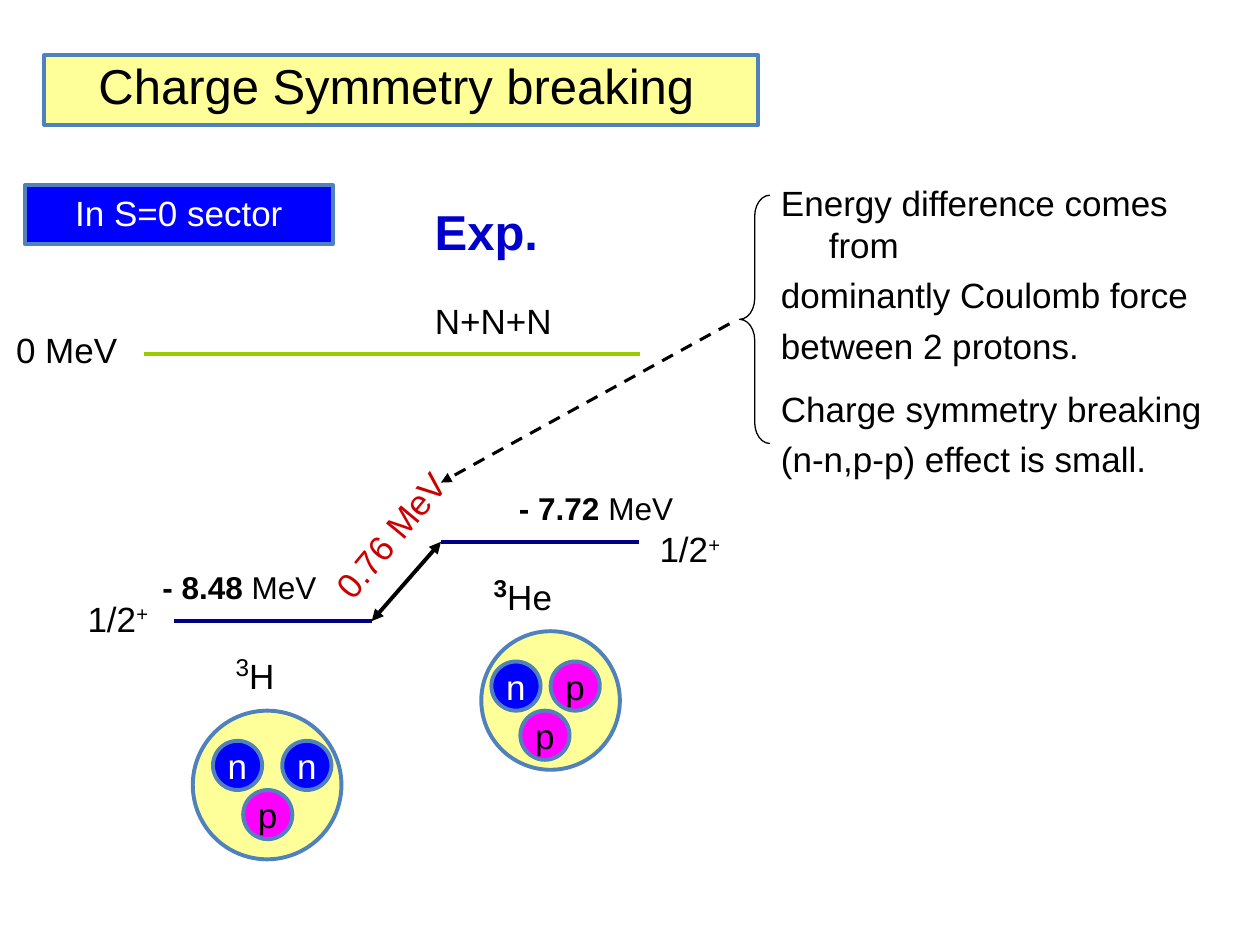
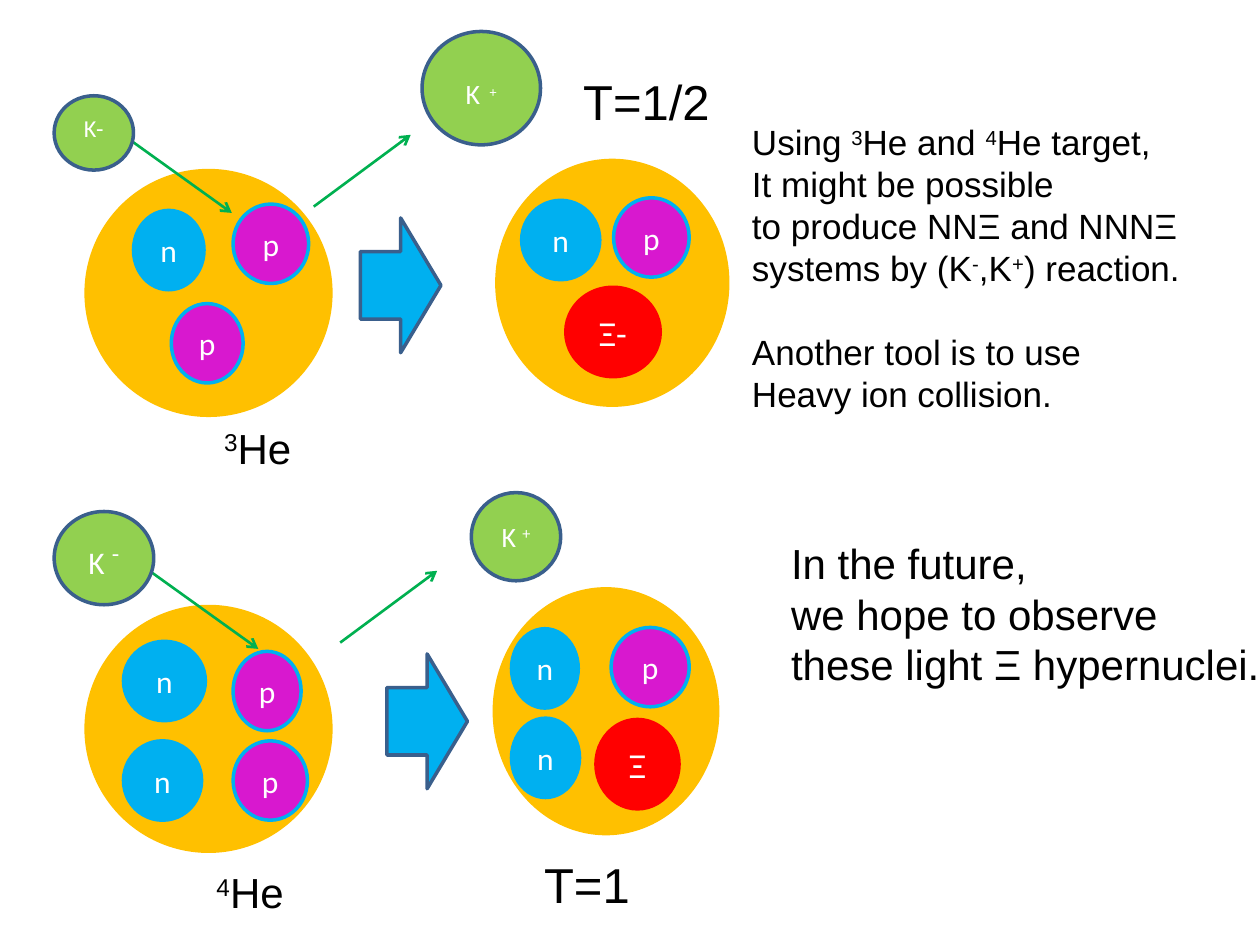
from lxml import etree
from pptx import Presentation
from pptx.dml.color import RGBColor
from pptx.enum.dml import MSO_LINE
from pptx.enum.shapes import MSO_CONNECTOR, MSO_SHAPE
from pptx.enum.text import MSO_ANCHOR, MSO_AUTO_SIZE, PP_ALIGN
from pptx.oxml.ns import qn
from pptx.util import Pt

EMU_PER_PX = 9144
BLANK_LAYOUT = 6
RECTANGLE, ELLIPSE = MSO_SHAPE.RECTANGLE, MSO_SHAPE.OVAL
RIGHT_ARROW, LEFT_BRACE = MSO_SHAPE.RIGHT_ARROW, MSO_SHAPE.LEFT_BRACE
STRAIGHT = MSO_CONNECTOR.STRAIGHT
DASH = MSO_LINE.DASH
MIDDLE = MSO_ANCHOR.MIDDLE
GROW = MSO_AUTO_SIZE.SHAPE_TO_FIT_TEXT
LEFT, CENTER = PP_ALIGN.LEFT, PP_ALIGN.CENTER

BLACK = RGBColor(0x00, 0x00, 0x00)
WHITE = RGBColor(0xFF, 0xFF, 0xFF)
BLUE = RGBColor(0x00, 0x00, 0xFF)
EXP_BLUE = RGBColor(0x00, 0x00, 0xCC)
NAVY = RGBColor(0x00, 0x00, 0x80)
STEEL = RGBColor(0x4F, 0x81, 0xBD)
DARK_STEEL = RGBColor(0x3A, 0x5F, 0x8C)
SKY = RGBColor(0x00, 0xB0, 0xF0)
PALE_YELLOW = RGBColor(0xFF, 0xFF, 0x99)
ORANGE = RGBColor(0xFF, 0xC0, 0x00)
MAGENTA = RGBColor(0xFF, 0x00, 0xFF)
PURPLE = RGBColor(0xD8, 0x18, 0xCF)
RED = RGBColor(0xFF, 0x00, 0x00)
DARK_RED = RGBColor(0xCC, 0x00, 0x00)
LIME = RGBColor(0x99, 0xCC, 0x00)
KAON_GREEN = RGBColor(0x92, 0xD0, 0x50)
ARROW_GREEN = RGBColor(0x00, 0xB0, 0x50)

BOLD, SUPER = "bold", "super"

LEVEL_STYLE = {
    "font": "Arial", "size": 20, "width": 2.25, "shell": (PALE_YELLOW, STEEL),
    "n": (BLUE, STEEL, WHITE), "p": (MAGENTA, STEEL, BLACK),
}
REACTION_STYLE = {
    "font": "Calibri", "size": 18, "width": 2, "shell": (ORANGE, None),
    "n": (SKY, SKY, WHITE), "p": (PURPLE, SKY, WHITE),
    "Ξ": (RED, RED, WHITE), "Ξ-": (RED, RED, WHITE),
}


def px(value):
    return value * EMU_PER_PX


def offset(box, left, top):
    return (box[0] + left, box[1] + top, *box[2:])


def add_runs(paragraph, runs, color, font):
    for text, size, *flags in runs:
        run = paragraph.add_run()
        run.text = text
        run.font.name = font
        run.font.size = Pt(size)
        run.font.color.rgb = color
        run.font.bold = BOLD in flags
        if SUPER in flags:
            run.font._element.set("baseline", "30000")


def add_text(slide, box, lines, color=BLACK, align=LEFT):
    textbox = slide.shapes.add_textbox(*map(px, box))
    frame = textbox.text_frame
    frame.word_wrap = False
    frame.auto_size = GROW
    for index, runs in enumerate(lines):
        paragraph = frame.add_paragraph() if index else frame.paragraphs[0]
        paragraph.alignment = align
        add_runs(paragraph, runs, color, "Arial")
    return textbox


def add_label(slide, box, *runs, color=BLACK):
    return add_text(slide, box, [runs], color, CENTER)


def add_figure(slide, kind, box, fill, line, width=2.0):
    shape = slide.shapes.add_shape(kind, *map(px, box))
    shape.shadow.inherit = False
    if fill is None:
        shape.fill.background()
    else:
        shape.fill.solid()
        shape.fill.fore_color.rgb = fill
    if line is None:
        shape.line.fill.background()
    else:
        shape.line.color.rgb = line
        shape.line.width = Pt(width)
    return shape


def add_disc(slide, box, colors, runs, style):
    fill, line, text_color = colors
    disc = add_figure(slide, ELLIPSE, box, fill, line, style["width"])
    frame = disc.text_frame
    frame.word_wrap = False
    frame.vertical_anchor = MIDDLE
    paragraph = frame.paragraphs[0]
    paragraph.alignment = CENTER
    add_runs(paragraph, runs, text_color, style["font"])


def add_line(slide, start, end, color, width, head=None, tail=None, dash=None):
    connector = slide.shapes.add_connector(STRAIGHT, *map(px, (*start, *end)))
    connector.line.color.rgb = color
    connector.line.width = Pt(width)
    if dash:
        connector.line.dash_style = dash
    outline = connector.line._get_or_add_ln()
    for tag, arrowhead in (("a:headEnd", head), ("a:tailEnd", tail)):
        if arrowhead:
            etree.SubElement(outline, qn(tag), type=arrowhead)
    etree.SubElement(connector._element.spPr, qn("a:effectLst"))


def add_nucleus(slide, box, nucleons, style):
    add_figure(slide, ELLIPSE, box, *style["shell"], style["width"])
    for name, *nucleon_box in nucleons:
        size = 20 if "Ξ" in name else style["size"]
        add_disc(slide, offset(nucleon_box, *box[:2]), style[name],
                 [(name, size)], style)


def add_headings(slide, left, top):
    add_figure(slide, RECTANGLE, (left + 15, top, 567, 55), PALE_YELLOW, STEEL, 2.25)
    add_label(slide, (left + 33, top - 5, 523, 57), ("Charge Symmetry breaking", 28))
    add_figure(slide, RECTANGLE, (left, top + 103, 244, 47), BLUE, STEEL, 2.25)
    add_label(slide, (left, top + 103, 244, 43), ("In S=0 sector", 20), color=WHITE)
    add_label(slide, (left + 315, top + 111, 102, 57), ("Exp.", 28, BOLD), color=EXP_BLUE)


def add_levels(slide, left, top):
    def at(x, y):
        return left + x, top + y

    add_line(slide, at(113, 48), at(507, 48), LIME, 2.25)
    add_label(slide, (*at(334, 0), 113, 43), ("N+N+N", 20))
    add_label(slide, (*at(-1, 23), 106, 43), ("0 MeV", 20))
    levels = [
        (137, 260, "- 8.48", (118, 213), (58, 236)),
        (349, 197, "- 7.72", (401, 150), (512, 181)),
    ]
    for x, y, energy, energy_at, spin_at in levels:
        add_line(slide, at(x, y), at(x + 157, y), NAVY, 2.25)
        add_label(slide, (*at(*energy_at), 142, 40), (energy, 18, BOLD), (" MeV", 18))
        add_label(slide, (*at(*spin_at), 69, 43), ("1/2", 20), ("+", 20, SUPER))
    add_line(slide, at(349, 197), at(294, 260), BLACK, 2.25, "triangle", "triangle")
    gap = add_label(slide, (*at(239, 170), 139, 43), ("0.76 MeV", 20), color=DARK_RED)
    gap.rotation = 309.5

    add_label(slide, (*at(175, 276), 53, 43), ("3", 24, SUPER), ("H", 20))
    add_nucleus(slide, (*at(152, 331), 118, 118), [
        ("n", 16, 24, 39, 39), ("n", 71, 24, 39, 39), ("p", 40, 63, 39, 39),
    ], LEVEL_STYLE)
    add_label(slide, (*at(380, 213), 68, 43), ("3", 24, SUPER, BOLD), ("He", 20))
    add_nucleus(slide, (*at(381, 268), 110, 110), [
        ("n", 8, 24, 39, 39), ("p", 31, 63, 39, 39), ("p", 55, 24, 39, 39),
    ], LEVEL_STYLE)


def add_explanation(slide, left, top):
    add_line(slide, (left - 8, top + 102), (left - 237, top + 228), BLACK, 1.75,
             tail="triangle", dash=DASH)
    brace = add_figure(slide, LEFT_BRACE, (left, top, 24, 197), None, BLACK, 0.75)
    brace.adjustments[0] = 0.69
    lines = [
        ("Energy difference comes from", 1.0),
        ("dominantly Coulomb force", 1.2),
        ("between 2 protons.", 1.2),
        ("Charge symmetry breaking", 1.5),
        ("(n-n,p-p) effect is small.", 1.2),
    ]
    textbox = add_text(slide, (left + 23, top - 16, 370, 213),
                       [[(text, 20)] for text, spacing in lines])
    textbox.text_frame.word_wrap = True
    for paragraph, (text, spacing) in zip(textbox.text_frame.paragraphs, lines):
        paragraph.line_spacing = spacing
        properties = paragraph._p.get_or_add_pPr()
        properties.set("marL", str(px(38)))
        properties.set("indent", str(-px(38)))


def add_reaction(slide, left, top, shift, reaction):
    def at(x, y):
        return left + x, top + y

    add_nucleus(slide, offset(reaction["product_box"], left, top),
                reaction["product"], REACTION_STYLE)
    add_nucleus(slide, (left, top, 197, 197), reaction["target"], REACTION_STYLE)
    add_line(slide, at(shift + 18, -36), at(shift + 117, 35), ARROW_GREEN, 1.5, tail="arrow")
    add_line(slide, at(shift + 182, 30), at(shift + 259, -27), ARROW_GREEN, 1.5, tail="arrow")
    add_figure(slide, RIGHT_ARROW, (*at(shift + 219, 39), 64, 107), SKY, DARK_STEEL)
    for kaon_box, runs in reaction["kaons"]:
        add_disc(slide, offset(kaon_box, left, top), (KAON_GREEN, DARK_STEEL, WHITE),
                 runs, REACTION_STYLE)
    add_text(slide, (*at(*reaction["target_at"]), 76, 51),
             [[(reaction["mass"], 24, SUPER), ("He", 24)]])
    add_text(slide, offset(reaction["isospin_box"], left, top), [[(reaction["isospin"], 28)]])


def add_outlook(slide, left, top):
    textbox = add_text(slide, (left, top, 364, 246), [
        [("Using ", 20), ("3", 20, SUPER), ("He and ", 20), ("4", 20, SUPER),
         ("He target,", 20)],
        [("It might be possible", 20)],
        [("to produce NNΞ and NNNΞ", 20)],
        [("systems by (K", 20), ("-", 20, SUPER), (",K", 20), ("+", 20, SUPER),
         (") reaction.", 20)],
        [("Another tool is to use", 20)],
        [("Heavy ion collision.", 20)],
    ])
    textbox.text_frame.paragraphs[4].space_before = Pt(24)
    future = ["In the future,", "we hope to observe", "these light Ξ hypernuclei."]
    add_text(slide, (left + 31, top + 331, 396, 131), [[(line, 24)] for line in future])


HELIUM_3 = {
    "mass": "3", "target_at": (101, 196),
    "target": [("n", 39, 33, 56, 63), ("p", 118, 28, 60, 63), ("p", 69, 107, 57, 63)],
    "product_box": (326, -8, 186, 197),
    "product": [("n", 21, 33, 62, 63), ("Ξ-", 56, 102, 75, 71), ("p", 94, 31, 60, 63)],
    "kaons": [
        ((-24, -58, 63, 59), [("K-", 24, SUPER)]),
        ((268, -109, 94, 90), [("K", 16), (" ", 24), ("+", 14, SUPER)]),
    ],
    "isospin": "T=1/2", "isospin_box": (386, -82, 122, 57),
}
HELIUM_4 = {
    "mass": "4", "target_at": (95, 203),
    "target": [("n", 31, 29, 65, 63), ("n", 31, 108, 62, 63),
               ("p", 118, 37, 54, 63), ("p", 118, 108, 59, 63)],
    "product_box": (324, -14, 180, 197),
    "product": [("n", 15, 33, 53, 63), ("n", 15, 104, 54, 63),
                ("Ξ", 82, 105, 66, 71), ("p", 94, 32, 62, 63)],
    "kaons": [
        ((-24, -74, 79, 74), [("K ", 18), ("-", 24, SUPER)]),
        ((307, -89, 71, 70), [("K ", 16), ("+", 16, SUPER)]),
    ],
    "isospin": "T=1", "isospin_box": (355, 193, 89, 57),
}


def build_symmetry_slide(slide):
    add_headings(slide, 20, 44)
    add_levels(slide, 1, 233)
    add_explanation(slide, 587, 155)


def build_reaction_slide(slide):
    add_reaction(slide, 67, 134, 0, HELIUM_3)
    add_reaction(slide, 67, 480, 21, HELIUM_4)
    add_outlook(slide, 587, 91)


def main():
    presentation = Presentation()
    presentation.slide_width = px(1000)
    presentation.slide_height = px(750)
    for build in (build_symmetry_slide, build_reaction_slide):
        build(presentation.slides.add_slide(presentation.slide_layouts[BLANK_LAYOUT]))
    presentation.save("out.pptx")


if __name__ == "__main__":
    main()
